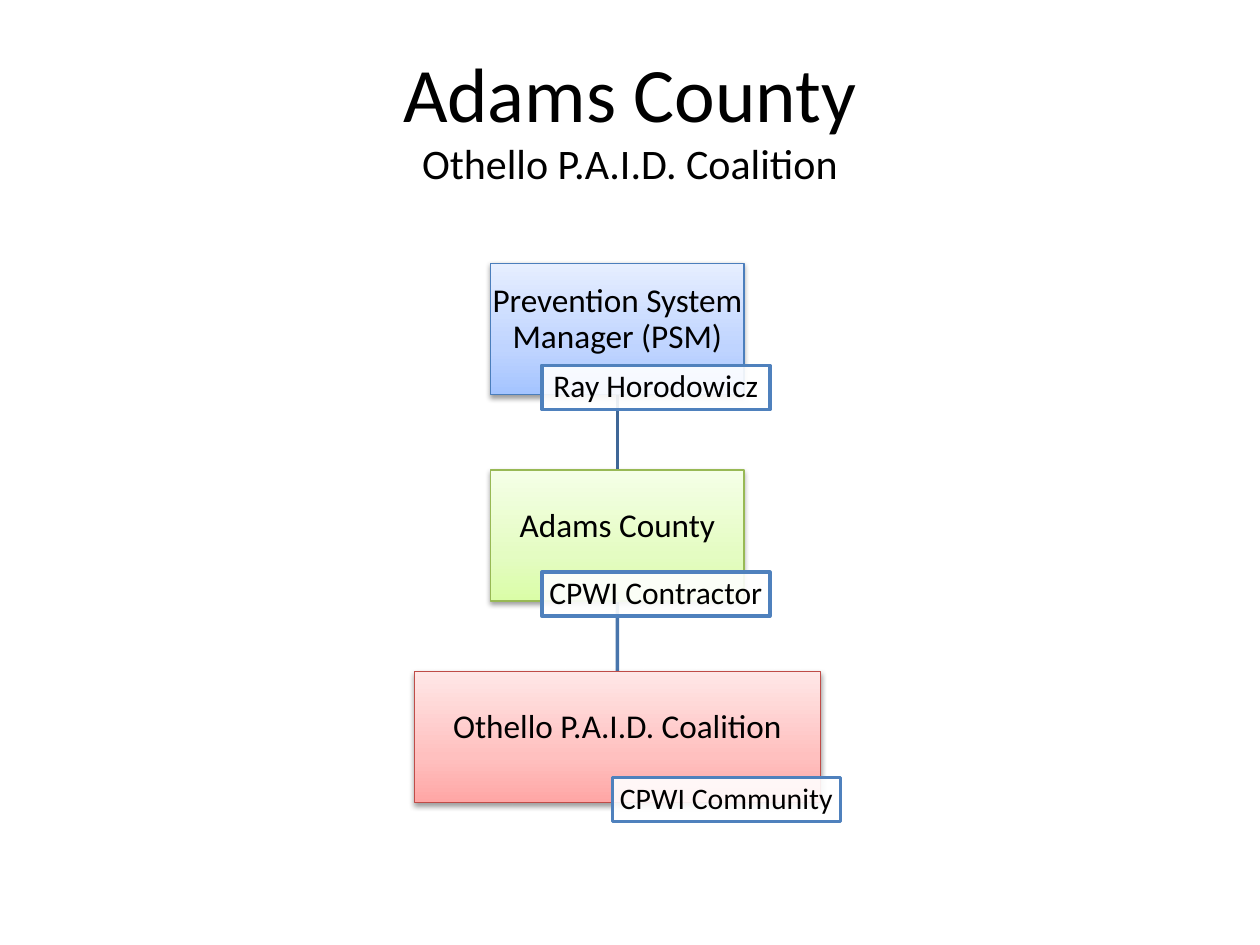
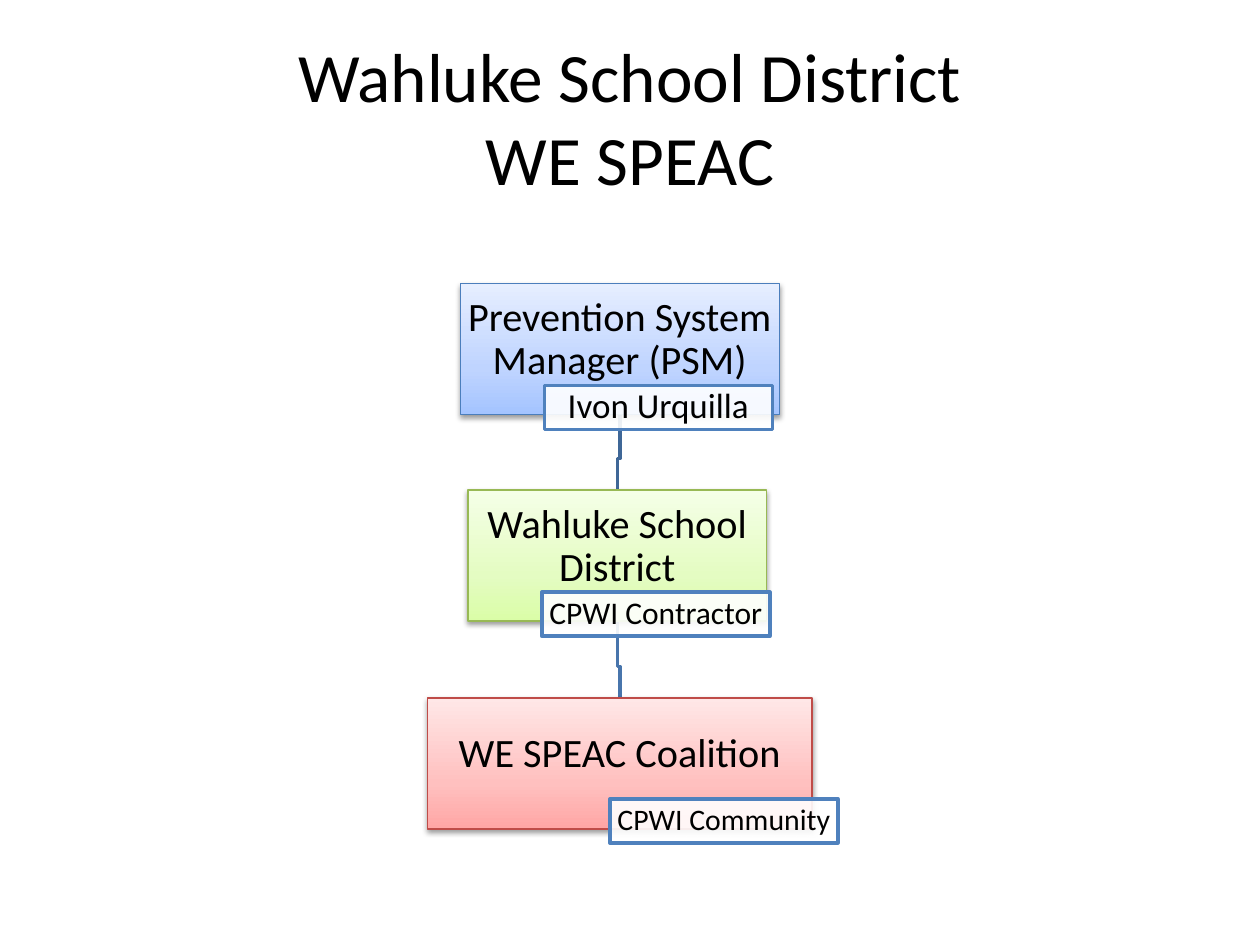
from copy import deepcopy

from lxml.etree import SubElement
from pptx import Presentation
from pptx.dml.color import RGBColor
from pptx.enum.shapes import MSO_CONNECTOR, MSO_SHAPE
from pptx.enum.text import MSO_ANCHOR, PP_ALIGN
from pptx.oxml.ns import qn
from pptx.util import Inches, Pt

FONT = "Calibri"
BLACK = RGBColor(0, 0, 0)
WHITE = RGBColor(255, 255, 255)
EDGE = RGBColor(0x4F, 0x81, 0xBD)
LINKS = [RGBColor(0x3F, 0x67, 0x97), RGBColor(0x48, 0x75, 0xAC)]
BLUE = [RGBColor(0xA4, 0xC4, 0xFF), RGBColor(0xBF, 0xD4, 0xFF),
        RGBColor(0xE6, 0xEE, 0xFF), RGBColor(0x4B, 0x7E, 0xBC)]
GREEN = [RGBColor(0xDA, 0xFD, 0xA7), RGBColor(0xE4, 0xFC, 0xC2),
         RGBColor(0xF5, 0xFF, 0xE7), RGBColor(0x98, 0xB9, 0x55)]
RED = [RGBColor(0xFF, 0xA6, 0xA5), RGBColor(0xFF, 0xC0, 0xBF),
       RGBColor(0xFF, 0xE7, 0xE7), RGBColor(0xBF, 0x4C, 0x48)]
TONES = [BLUE, GREEN, RED]
STOPS = [0, 0.35, 1]
BOX_H = 1.04
TAG_W, TAG_H = 1.81, 0.35
BEND = 0.25


def add_run(para, text, size):
    run = para.add_run()
    run.text = text
    run.font.name = FONT
    run.font.size = Pt(size)
    run.font.color.rgb = BLACK


def add_title(slide, lines):
    title = slide.shapes.title
    title.left, title.top = Inches(0.5), Inches(0.3)
    title.width, title.height = Inches(9), Inches(1.25)
    title.text_frame.vertical_anchor = MSO_ANCHOR.MIDDLE
    para = title.text_frame.paragraphs[0]
    para.alignment = PP_ALIGN.CENTER
    for i, (text, size) in enumerate(lines):
        if i:
            para.add_line_break()
        add_run(para, text, size)


def add_rect(slide, left, top, width, height, text, size, side, base):
    rect = slide.shapes.add_shape(
        MSO_SHAPE.RECTANGLE, Inches(left), Inches(top), Inches(width), Inches(height))
    rect.shadow.inherit = False
    frame = rect.text_frame
    frame.word_wrap = True
    frame.vertical_anchor = MSO_ANCHOR.MIDDLE
    frame.margin_left = frame.margin_right = Inches(side)
    frame.margin_top, frame.margin_bottom = Inches(0.01), Inches(base)
    para = frame.paragraphs[0]
    para.alignment = PP_ALIGN.CENTER
    para.line_spacing = 0.9
    add_run(para, text, size)
    return rect


def add_shade(rect):
    glow = SubElement(rect._element.spPr.find(qn("a:effectLst")), qn("a:outerShdw"),
                      blurRad=str(Pt(3.1)), dist=str(Pt(1.6)), dir="5400000",
                      rotWithShape="0")
    tint = SubElement(glow, qn("a:srgbClr"), val=str(BLACK))
    SubElement(tint, qn("a:alpha"), val="38000")


def add_box(slide, left, top, width, text, size, tone):
    box = add_rect(slide, left, top, width, BOX_H, text, size, 0.01, 0.15)
    box.fill.gradient()
    box.fill.gradient_angle = 90
    first = box._element.spPr.find(".//" + qn("a:gs"))
    first.addnext(deepcopy(first))
    for stop, place, color in zip(box.fill.gradient_stops, STOPS, tone):
        stop.position = place
        stop.color.rgb = color
    box.line.color.rgb = tone[-1]
    box.line.width = Pt(0.75)
    add_shade(box)
    return box


def add_tag(slide, left, top, text, size):
    tag = add_rect(slide, left, top, TAG_W, TAG_H, text, size, 0.05, 0.01)
    tag.fill.solid()
    tag.fill.fore_color.rgb = WHITE
    tint = tag._element.spPr.find(qn("a:solidFill"))[0]
    SubElement(tint, qn("a:alpha"), val="90000")
    tag.line.color.rgb = EDGE
    tag.line.width = Pt(2)


def add_link(slide, start, end, color):
    (x1, y1), (x2, y2) = start, end
    straight = x1 == x2
    if straight:
        link = slide.shapes.add_connector(
            MSO_CONNECTOR.STRAIGHT, Inches(x1), Inches(y1), Inches(x2), Inches(y2))
        SubElement(link._element.spPr, qn("a:effectLst"))
    else:
        turn = y2 - BEND
        path = slide.shapes.build_freeform(Inches(x1), Inches(y1))
        path.add_line_segments(
            [(Inches(x), Inches(y)) for x, y in [(x1, turn), (x2, turn), end]],
            close=False)
        link = path.convert_to_shape()
        link.fill.background()
        link.shadow.inherit = False
    link.line.color.rgb = color
    link.line.width = Pt(2)
    return link if straight else None


def add_chain(slide, size, nodes):
    links = [add_link(slide, (a[0], a[1] + BOX_H), b[:2], color)
             for a, b, color in zip(nodes, nodes[1:], LINKS)]
    boxes = []
    for (mid, top, width, text, tag), tone in zip(nodes, TONES):
        boxes.append(add_box(slide, mid - width / 2, top, width, text, size, tone))
        dx, dy, name, small = tag
        add_tag(slide, mid + dx, top + dy, name, small)
    for link, upper, lower in zip(links, boxes, boxes[1:]):
        if link:
            link.begin_connect(upper, 2)
            link.end_connect(lower, 0)


def add_page(deck, lines, size, nodes):
    slide = deck.slides.add_slide(deck.slide_layouts[5])
    add_title(slide, lines)
    add_chain(slide, size, nodes)


def main():
    deck = Presentation()
    deck.slide_width, deck.slide_height = Inches(10), Inches(7.5)
    lead = "Prevention System Manager (PSM)"
    agent = (-0.6, 0.81, "CPWI Contractor", 18)
    add_page(deck, [("Adams County", 44), ("Othello P.A.I.D. Coalition", 24)], 19, [
        (4.9, 2.09, 2.01, lead, (-0.6, 0.81, "Ray Horodowicz", 18)),
        (4.9, 3.73, 2.01, "Adams County", agent),
        (4.9, 5.33, 3.22, "Othello P.A.I.D. Coalition",
         (-0.04, 0.84, "CPWI Community", 17)),
    ])
    add_page(deck, [("Wahluke School District", 39.6), ("WE SPEAC", 39.6)], 23, [
        (4.92, 2.25, 2.53, lead, (-0.6, 0.81, "Ivon Urquilla", 20)),
        (4.9, 3.89, 2.37, "Wahluke School District", agent),
        (4.92, 5.54, 3.05, "WE SPEAC Coalition",
         (-0.08, 0.8, "CPWI Community", 17)),
    ])
    deck.save("out.pptx")


if __name__ == "__main__":
    main()
